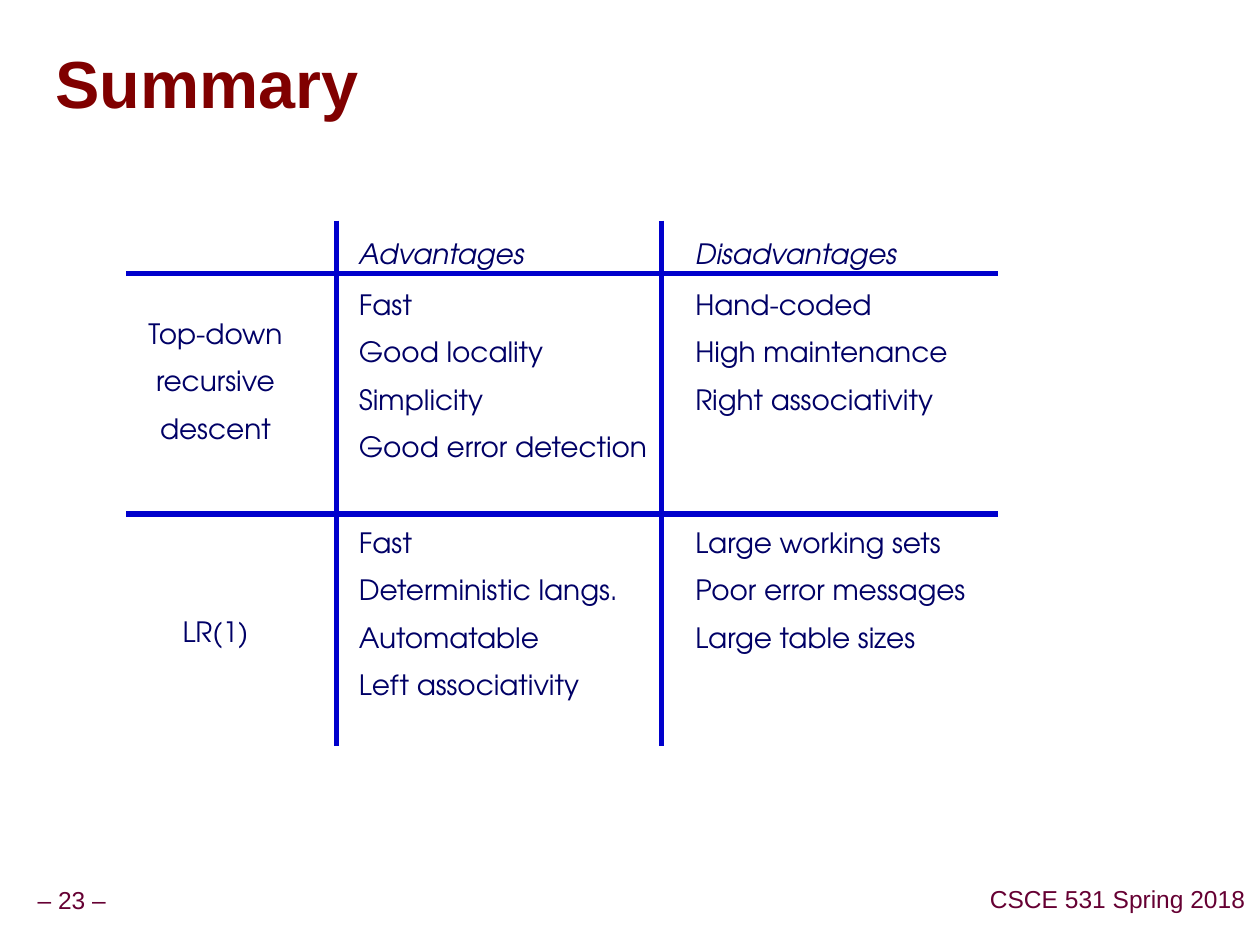
from dataclasses import dataclass

from lxml import etree
from pptx import Presentation
from pptx.dml.color import RGBColor
from pptx.enum.shapes import MSO_CONNECTOR
from pptx.enum.text import MSO_ANCHOR, PP_ALIGN
from pptx.oxml.ns import qn
from pptx.util import Inches, Pt

LEFT, CENTER = PP_ALIGN.LEFT, PP_ALIGN.CENTER
MIDDLE = MSO_ANCHOR.MIDDLE
STRAIGHT = MSO_CONNECTOR.STRAIGHT

BODY_FONT, TITLE_FONT = "TeX Gyre Adventor", "Arial"
NAVY, MAROON, PLUM, BLUE = "000066", "800000", "660033", "0000CC"
ITEM_GAP, HEADER_GAP = 8, 9.6  # points before a paragraph
LINE_PITCH = 27.2  # points from one item to the next
LINES_PER_ROW = 5


@dataclass
class Column:
    left: float
    height: float
    header: str
    rows: list[list[str]]


@dataclass
class RowLabel:
    top: float
    height: float
    lines: list[str]


@dataclass
class Footer:
    left: float
    top: float
    width: float
    words: str


@dataclass
class Rule:
    x1: float
    y1: float
    x2: float
    y2: float


COLUMNS = [
    Column(2.75, 4, "Advantages", [
        ["Fast", "Good locality", "Simplicity", "Good error detection"],
        ["Fast", "Deterministic langs.", "Automatable", "Left associativity"],
    ]),
    Column(5.42, 3.6, "Disadvantages", [
        ["Hand-coded", "High maintenance", "Right associativity"],
        ["Large working sets", "Poor error messages", "Large table sizes"],
    ]),
]
ROW_LABELS = [
    RowLabel(2.46, 1.17, ["Top-down", "recursive", "descent"]),
    RowLabel(4.83, 0.37, ["LR(1)"]),
]
FOOTERS = [
    Footer(0.24, 7, 0.66, "– 23 –"),
    Footer(7.8, 6.99, 2.14, "CSCE 531 Spring 2018"),
]
RULES = [Rule(1, y, 7.92, y) for y in (2.17, 4.08)]
RULES += [Rule(x, 1.75, x, 5.92) for x in (2.67, 5.25)]


def color(value: str) -> RGBColor:
    return RGBColor.from_string(value)


def add_span(para, words: str, size: float, font: str, ink: str,
             bold: bool = False, italic: bool = False):
    span = para.add_run()
    span.text = words
    span.font.size = Pt(size)
    span.font.bold, span.font.italic = bold, italic
    span.font.color.rgb = color(ink)
    span.font.name = font
    return span


def add_box(slide, left: float, top: float, width: float, height: float):
    box = slide.shapes.add_textbox(
        Inches(left), Inches(top), Inches(width), Inches(height))
    box.text_frame.word_wrap = True
    return box.text_frame


def set_margins(frame, margin: float) -> None:
    frame.margin_left = frame.margin_right = Inches(margin)
    frame.margin_top = frame.margin_bottom = Inches(margin)


def add_item(frame, words: str, gap: float, align=LEFT) -> None:
    para = frame.add_paragraph()
    para.alignment = align
    para.space_before = Pt(gap)
    add_span(para, words, 16, BODY_FONT, NAVY)


def draw_title(slide, words: str) -> None:
    title = slide.shapes.title
    title.left, title.top = Inches(0.44), Inches(0.27)
    title.width, title.height = Inches(9.53), Inches(0.85)
    frame = title.text_frame
    frame.vertical_anchor = MIDDLE
    set_margins(frame, 0)
    para = frame.paragraphs[0]
    para.alignment = LEFT
    para.line_spacing = 0.87
    span = add_span(para, words, 38, TITLE_FONT, MAROON, bold=True)
    # Text shadow: the effect list sits between the fill and the font name
    effects = etree.Element(qn("a:effectLst"))
    shadow = etree.SubElement(effects, qn("a:outerShdw"), blurRad="38100",
                              dist="38100", dir="2700000", algn="tl")
    etree.SubElement(shadow, qn("a:srgbClr"), val="C0C0C0")
    span.font._element.find(qn("a:latin")).addprevious(effects)


def draw_column(slide, column: Column) -> None:
    frame = add_box(slide, column.left, 1.83, 2.58, column.height)
    add_span(frame.paragraphs[0], column.header, 16, BODY_FONT, NAVY,
             italic=True)
    gap = HEADER_GAP
    for items in column.rows:
        for item in items:
            add_item(frame, item, gap)
            gap = ITEM_GAP
        # Every row takes the same number of lines, filled or not
        gap = ITEM_GAP + (LINES_PER_ROW - len(items)) * LINE_PITCH


def draw_row_label(slide, label: RowLabel) -> None:
    frame = add_box(slide, 0.92, label.top, 1.58, label.height)
    first, *others = label.lines
    frame.paragraphs[0].alignment = CENTER
    add_span(frame.paragraphs[0], first, 16, BODY_FONT, NAVY)
    for line in others:
        add_item(frame, line, ITEM_GAP, CENTER)


def draw_rule(slide, rule: Rule) -> None:
    line = slide.shapes.add_connector(
        STRAIGHT, Inches(rule.x1), Inches(rule.y1),
        Inches(rule.x2), Inches(rule.y2))
    line.line.color.rgb = color(BLUE)
    line.line.width = Pt(3)
    etree.SubElement(line._element.spPr, qn("a:effectLst"))


def draw_footer(slide, footer: Footer) -> None:
    frame = add_box(slide, footer.left, footer.top, footer.width, 0.31)
    frame.word_wrap = False
    frame.vertical_anchor = MIDDLE
    set_margins(frame, 0.05)
    para = frame.paragraphs[0]
    para.alignment = CENTER
    para.line_spacing = 0.9
    add_span(para, footer.words, 14, TITLE_FONT, PLUM)


def main() -> None:
    deck = Presentation()
    deck.slide_width, deck.slide_height = Inches(10), Inches(7.5)
    slide = deck.slides.add_slide(deck.slide_layouts.get_by_name("Title Only"))

    # Footer and title
    for footer in FOOTERS:
        draw_footer(slide, footer)
    draw_title(slide, "Summary")

    # Comparison grid
    for column in COLUMNS:
        draw_column(slide, column)
    for label in ROW_LABELS:
        draw_row_label(slide, label)
    for rule in RULES:
        draw_rule(slide, rule)

    deck.save("out.pptx")


if __name__ == "__main__":
    main()
